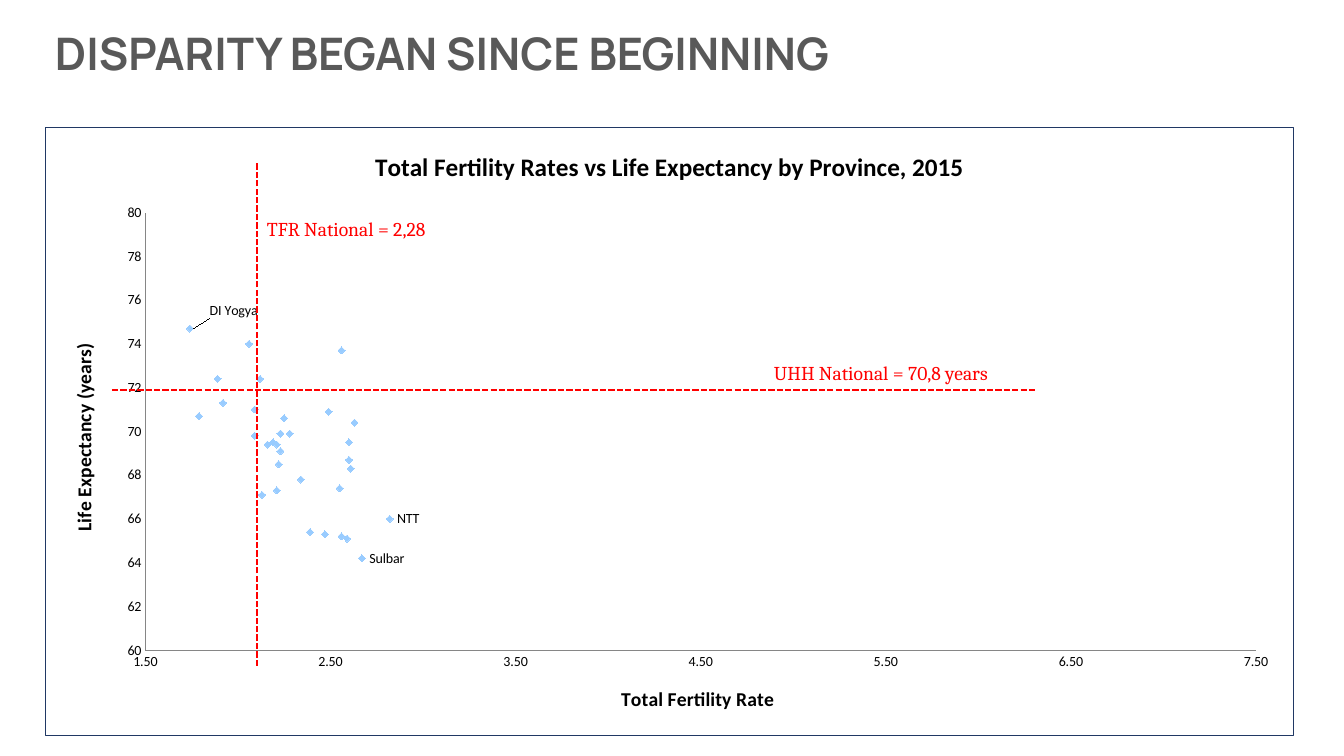
"""Build a slide with a scatter chart of fertility against life expectancy by province."""
from lxml import etree
from pptx import Presentation
from pptx.chart.data import XyChartData
from pptx.dml.color import RGBColor
from pptx.enum.chart import XL_CHART_TYPE, XL_LABEL_POSITION, XL_MARKER_STYLE, XL_TICK_MARK
from pptx.enum.dml import MSO_LINE
from pptx.enum.shapes import MSO_CONNECTOR
from pptx.oxml import parse_xml
from pptx.oxml.ns import nsdecls, qn
from pptx.util import Emu, Pt

COLORS = {"title": "595959", "red": "FF0000", "black": "000000",
          "marker": "99CCFF", "axis": "868686", "border": "203864"}
POINTS = [
    (2.6, 69.5), (2.61, 68.3), (2.6, 68.7), (2.49, 70.9), (2.25, 70.6), (2.23, 69.1),
    (2.22, 68.5), (2.28, 69.9), (2.23, 69.9), (2.21, 69.4), (1.89, 72.4), (2.12, 72.4),
    (2.06, 74), (1.74, 74.7), (1.79, 70.7), (2.16, 69.4), (1.92, 71.3), (2.39, 65.4),
    (2.82, 66), (2.23, 69.9), (2.19, 69.5), (2.34, 67.8), (2.56, 73.7), (2.09, 71),
    (2.21, 67.3), (2.09, 69.8), (2.63, 70.4), (2.13, 67.1), (2.67, 64.2), (2.47, 65.3),
    (2.55, 67.4), (2.56, 65.2), (2.59, 65.1)]
PROVINCES = {(1.74, 74.7): "DI Yogya", (2.82, 66): "NTT", (2.67, 64.2): "Sulbar"}


def px(n):
    return Emu(round(n * 914400 / 100.8))


def write(tf, text, size, color="black", font="Calibri", bold=False, spacing=None):
    p = tf.paragraphs[0]
    p.line_spacing = spacing
    r = p.add_run()
    r.text = text
    r.font.size, r.font.name, r.font.bold = Pt(size), font, bold
    r.font.color.rgb = RGBColor.from_string(COLORS[color])


prs = Presentation()
prs.slide_width, prs.slide_height = px(1344), px(756)
s = prs.slides.add_slide(prs.slide_layouts[6])

data = XyChartData()
series_data = data.add_series("Series 1")
for x, y in POINTS:
    series_data.add_data_point(x, y)
chart = s.shapes.add_chart(XL_CHART_TYPE.XY_SCATTER, px(45), px(127), px(1249), px(609), data).chart
chart.has_legend = False
chart.font.size, chart.font.name = Pt(10), "Calibri"
chart.font.color.rgb = RGBColor.from_string(COLORS["black"])
chart.has_title = True
write(chart.chart_title.text_frame, "Total Fertility Rates vs Life Expectancy by Province, 2015", 18, bold=True)
chart.chart_title.include_in_layout = False
chart.plots[0].vary_by_categories = False

axes = [(chart.category_axis, "Total Fertility Rate", 1.5, 7.5, 1, "0.00"),
        (chart.value_axis, "Life Expectancy (years)", 60, 80, 2, "0")]
for axis, title, low, high, step, number_format in axes:
    axis.minimum_scale, axis.maximum_scale, axis.major_unit = low, high, step
    axis.has_major_gridlines = False
    axis.major_tick_mark = axis.minor_tick_mark = XL_TICK_MARK.NONE
    axis.tick_labels.number_format = number_format
    axis.tick_labels.number_format_is_linked = False
    axis.format.line.color.rgb = RGBColor.from_string(COLORS["axis"])
    write(axis.axis_title.text_frame, title, 14, bold=True)

series = chart.plots[0].series[0]
series.format.line.fill.background()
series.marker.style, series.marker.size = XL_MARKER_STYLE.DIAMOND, 5
series.marker.format.fill.solid()
series.marker.format.fill.fore_color.rgb = RGBColor.from_string(COLORS["marker"])
series.marker.format.line.color.rgb = RGBColor.from_string(COLORS["marker"])
for point, name in PROVINCES.items():
    label = series.points[POINTS.index(point)].data_label
    write(label.text_frame, name, 10)
    label.position = XL_LABEL_POSITION.RIGHT
labels = series._element.find(qn("c:dLbls"))
labels.find(qn("c:showVal")).set("val", "0")
labels.find(qn("c:dLbl")).insert(1, parse_xml(
    f'<c:layout {nsdecls("c")}><c:manualLayout>'
    '<c:x val="0.01"/><c:y val="-0.03"/></c:manualLayout></c:layout>'))
labels.append(parse_xml(
    f'<c:extLst {nsdecls("c")}><c:ext uri="{{CE6537A1-D6FC-4f65-9D91-7224C49458BB}}" '
    'xmlns:c15="http://schemas.microsoft.com/office/drawing/2012/chart">'
    '<c15:showLeaderLines val="1"/></c:ext></c:extLst>'))

plot_area = chart._chartSpace.chart.plotArea
for layout in plot_area.findall(qn("c:layout")):
    plot_area.remove(layout)
plot_area.insert(0, parse_xml(
    f'<c:layout {nsdecls("c")}><c:manualLayout><c:layoutTarget val="inner"/>'
    '<c:xMode val="edge"/><c:yMode val="edge"/><c:x val="0.08"/><c:y val="0.14"/>'
    '<c:w val="0.89"/><c:h val="0.72"/></c:manualLayout></c:layout>'))
chart._chartSpace.chart.addnext(parse_xml(
    f'<c:spPr {nsdecls("c", "a")}><a:noFill/><a:ln w="9525"><a:solidFill>'
    f'<a:srgbClr val="{COLORS["border"]}"/></a:solidFill></a:ln></c:spPr>'))

for x1, y1, x2, y2 in [(112, 390, 1037, 390), (257, 666, 257, 162)]:
    line = s.shapes.add_connector(MSO_CONNECTOR.STRAIGHT, px(x1), px(y1), px(x2), px(y2))
    line.line.color.rgb = RGBColor.from_string(COLORS["red"])
    line.line.width, line.line.dash_style = Pt(1.5), MSO_LINE.SQUARE_DOT
    etree.SubElement(line._element.spPr, qn("a:effectLst"))

national = dict(size=14, color="red", font="Cambria")
heading = dict(size=32, color="title", font="Manrope", bold=True, spacing=0.75)
texts = [("UHH National = 70,8 years", 764, 356, 244, 34, False, national),
         ("TFR National = 2,28", 257, 212, 188, 34, False, national),
         ("DISPARITY BEGAN SINCE BEGINNING", 45, 33, 1171, 53, True, heading)]
for text, x, y, w, h, wrap, style in texts:
    tf = s.shapes.add_textbox(px(x), px(y), px(w), px(h)).text_frame
    tf.word_wrap = wrap
    write(tf, text, **style)

prs.save("out.pptx")
